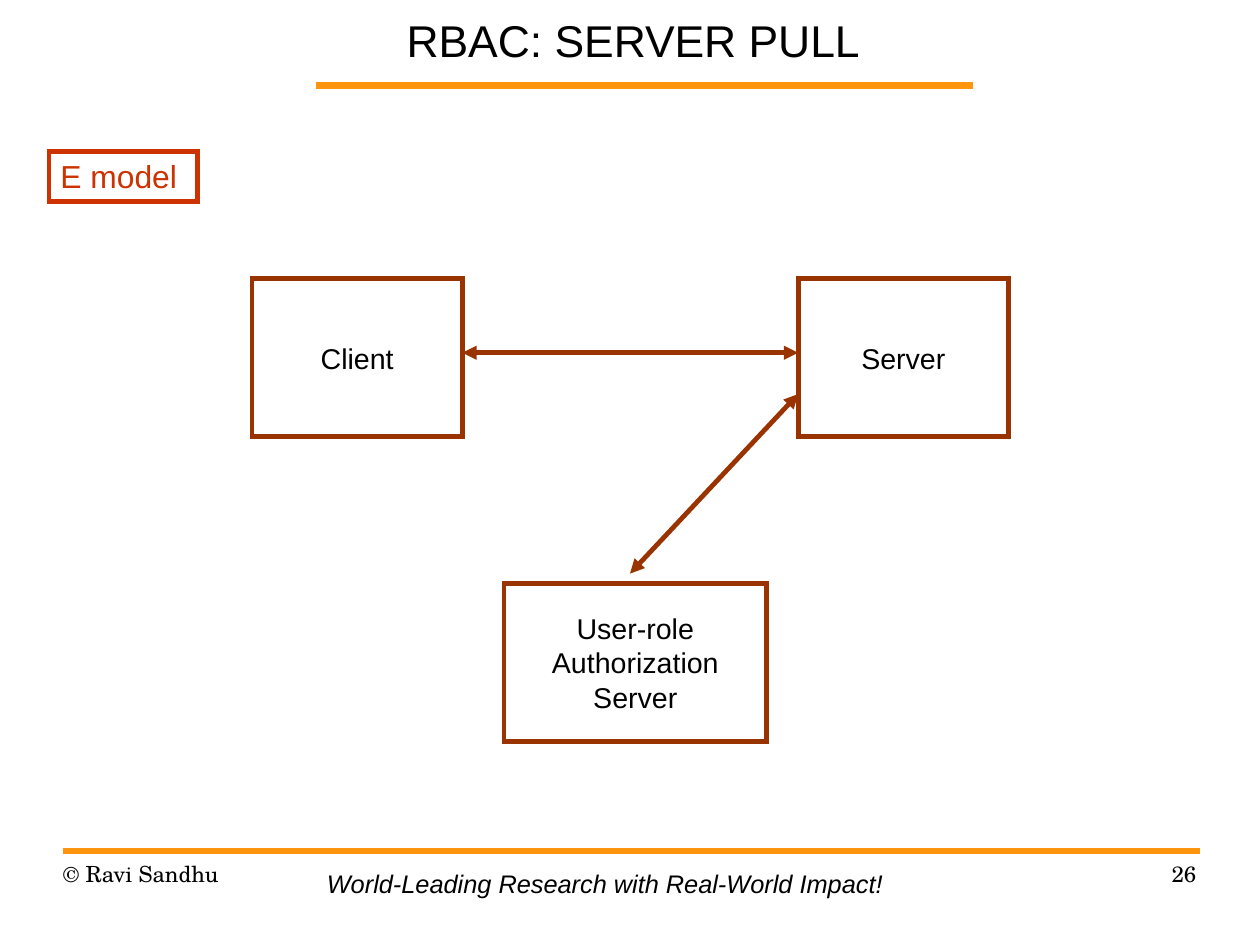
from lxml import etree
from pptx import Presentation
from pptx.dml.color import RGBColor
from pptx.enum.shapes import MSO_CONNECTOR, MSO_SHAPE
from pptx.enum.text import MSO_ANCHOR, PP_ALIGN
from pptx.oxml.ns import qn
from pptx.util import Cm, Inches, Pt

LEFT, CENTER, RIGHT = PP_ALIGN.LEFT, PP_ALIGN.CENTER, PP_ALIGN.RIGHT
TOP, MIDDLE, BOTTOM = MSO_ANCHOR.TOP, MSO_ANCHOR.MIDDLE, MSO_ANCHOR.BOTTOM
RECT, STRAIGHT = MSO_SHAPE.RECTANGLE, MSO_CONNECTOR.STRAIGHT

WIDTH, HEIGHT = 28, 21
COL, ROW = WIDTH / 100, HEIGHT / 100
SANS, SERIF = "Arial", "TeX Gyre Schola"
BLACK, ORANGE, RED, BROWN = "000000", "FF950E", "CC3300", "993300"

NODE_W, NODE_H, NODE_TOP = 16.7, 16.7, 29.5
CLIENT_X, SERVER_X = 20, 63.35
AUTH_X, AUTH_TOP, AUTH_W = 40, 61.75, 20.85
MARGIN, FOOTER_TOP, FOOTER_W, RIGHT_EDGE = 5, 91.05, 23.3, 94.95


def rgb(value):
    return RGBColor.from_string(value)


def grid(x, y, w, h):
    return Cm(x * COL), Cm(y * ROW), Cm(w * COL), Cm(h * ROW)


def write(sp, text, size, color=BLACK, font=SANS, align=LEFT, anchor=TOP,
          inset=(0.1, 0.05), italic=False):
    tf = sp.text_frame
    tf.text = text
    tf.word_wrap = True
    tf.vertical_anchor = anchor
    tf.margin_left = tf.margin_right = Inches(inset[0])
    tf.margin_top = tf.margin_bottom = Inches(inset[1])
    for p in tf.paragraphs:
        p.alignment = align
        for r in p.runs:
            r.font.name = font
            r.font.size = Pt(size)
            r.font.italic = italic
            r.font.color.rgb = rgb(color)


def label(slide, area, text, size, **style):
    write(slide.shapes.add_textbox(*grid(*area)), text, size, **style)


def box(slide, area, text, size, outline, **style):
    sp = slide.shapes.add_shape(RECT, *grid(*area))
    sp.shadow.inherit = False
    sp.fill.background()
    sp.line.color.rgb = rgb(outline)
    sp.line.width = Pt(3)
    etree.SubElement(sp.line._get_or_add_ln(), qn("a:miter"), lim="800000")
    write(sp, text, size, **style)


def node(slide, area, text):
    box(slide, area, text, 18, BROWN, align=CENTER, anchor=MIDDLE,
        inset=(0.11, 0.06))


def line(slide, start, end, color, width):
    cn = slide.shapes.add_connector(STRAIGHT, *grid(*start, *end))
    cn.line.color.rgb = rgb(color)
    cn.line.width = Pt(width)
    etree.SubElement(cn._element.spPr, qn("a:effectLst"))
    return cn


def double_arrow(slide, start, end):
    ln = line(slide, start, end, BROWN, 3).line._get_or_add_ln()
    for tag in ("a:headEnd", "a:tailEnd"):
        etree.SubElement(ln, qn(tag), type="triangle")


def footer(slide, x, text, align):
    label(slide, (x, FOOTER_TOP, FOOTER_W, 6.9), text, 14, font=SERIF,
          align=align, inset=(0, 0))


def main():
    prs = Presentation()
    prs.slide_width, prs.slide_height = Cm(WIDTH), Cm(HEIGHT)
    slide = prs.slides.add_slide(prs.slide_layouts[6])

    line(slide, (25.05, 9.07), (77.2, 9.07), ORANGE, 4.31)
    line(slide, (MARGIN, 90.05), (95.25, 90.05), ORANGE, 4.31)
    label(slide, (27.75, 0, 45, 7.6), "RBAC: SERVER PULL", 28,
          align=CENTER, anchor=BOTTOM, inset=(0.11, 0.05))
    footer(slide, MARGIN, "© Ravi Sandhu", LEFT)
    footer(slide, RIGHT_EDGE - FOOTER_W, "26", RIGHT)

    box(slide, (3.9, 16, 11.8, 5.3), "E model", 20, RED, color=RED)
    node(slide, (CLIENT_X, NODE_TOP, NODE_W, NODE_H), "Client")
    node(slide, (SERVER_X, NODE_TOP, NODE_W, NODE_H), "Server")
    double_arrow(slide, (CLIENT_X + NODE_W, 37.33), (SERVER_X, 37.33))
    node(slide, (AUTH_X, AUTH_TOP, AUTH_W, NODE_H),
         "User-role\nAuthorization\nServer")
    double_arrow(slide, (50, 60.7), (SERVER_X, 41.7))

    label(slide, (25.05, 91.3, 47, 4.5),
          "World-Leading Research with Real-World Impact!", 16, italic=True)
    prs.save("out.pptx")


if __name__ == "__main__":
    main()
